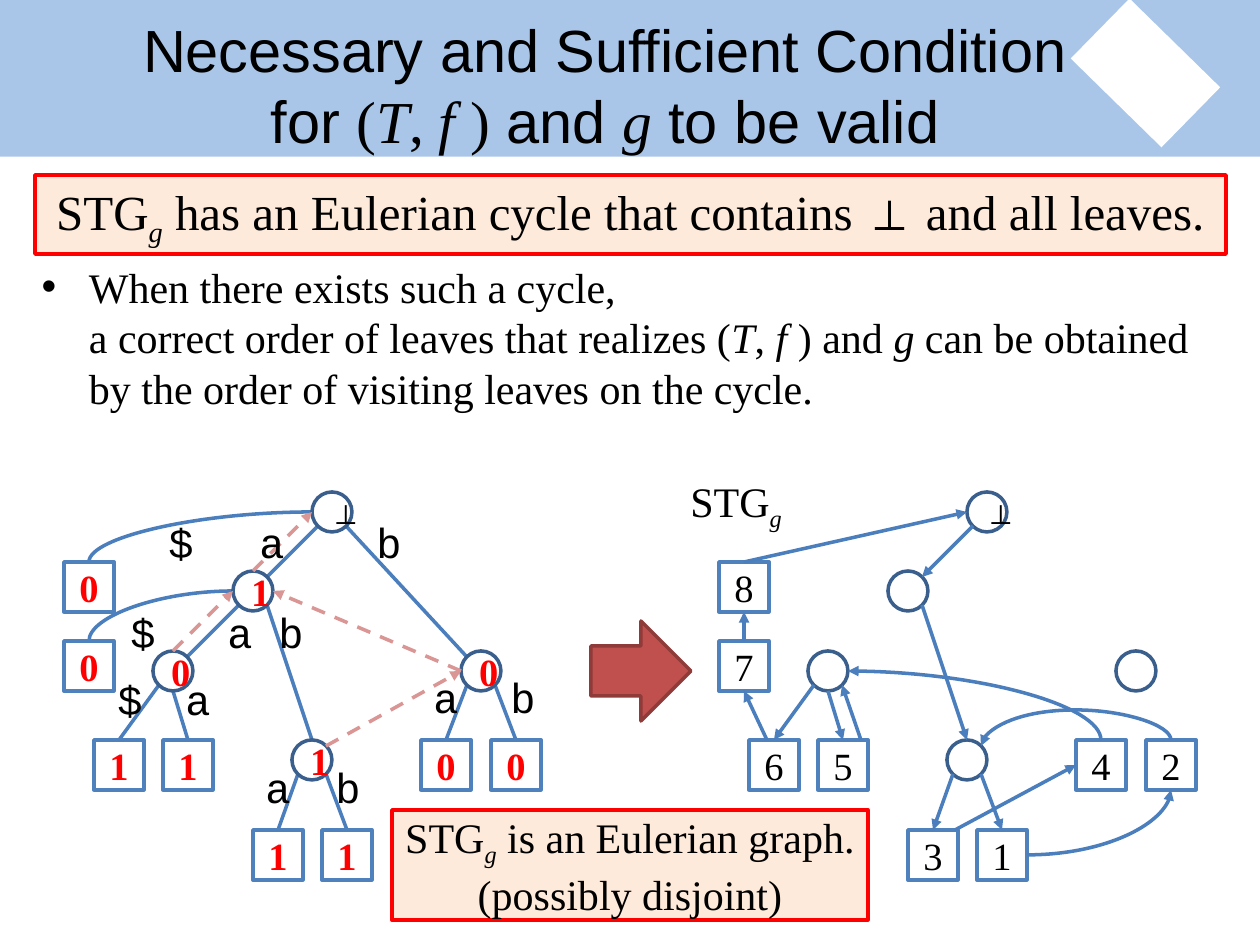
import lxml.etree
import pptx
import pptx.dml.color
import pptx.enum.dml
import pptx.enum.shapes
import pptx.enum.text
import pptx.oxml
import pptx.oxml.ns
import pptx.util

RGBColor = pptx.dml.color.RGBColor
BLACK = RGBColor(0x00, 0x00, 0x00)
WHITE = RGBColor(0xFF, 0xFF, 0xFF)
RED = RGBColor(0xFF, 0x00, 0x00)
PEACH = RGBColor(0xFD, 0xEA, 0xDA)
BAND_BLUE = RGBColor(0x55, 0x8E, 0xD5)
NODE_BLUE = RGBColor(0x3A, 0x5F, 0x8C)
LEAF_BLUE = RGBColor(0x4F, 0x81, 0xBD)
EDGE_BLUE = RGBColor(0x4B, 0x7E, 0xBC)
PINK = RGBColor(0xD9, 0x96, 0x94)
ARROW_RED = RGBColor(0xC0, 0x50, 0x4D)
ARROW_EDGE = RGBColor(0x8E, 0x3B, 0x39)

SANS, SERIF, MONO = "Arial", "Times New Roman", "Courier New"
EMU_PER_PX = 914400 / 126
SHAPES = pptx.enum.shapes.MSO_SHAPE
CENTER = pptx.enum.text.PP_ALIGN.CENTER
MIDDLE = pptx.enum.text.MSO_ANCHOR.MIDDLE
AUTO_SIZE = pptx.enum.text.MSO_AUTO_SIZE
qn = pptx.oxml.ns.qn

# Every node is named by the string that its path from the root spells.
ROOT = "⊥"
NODES = {ROOT: (332, 512), "a": (253, 591), "aa": (173, 671), "ab": (312, 760), "b": (481, 671)}
LEAVES = {"$": (89, 587), "a$": (89, 666), "aa$": (119, 765), "aaa": (188, 765),
          "aba": (278, 855), "abb": (347, 855), "ba": (446, 765), "bb": (516, 765)}
CENTERS = NODES | LEAVES
TREE_BITS = {"a": "1", "aa": "0", "ab": "1", "b": "0", "$": "0", "a$": "0", "aa$": "1",
             "aaa": "1", "aba": "1", "abb": "1", "ba": "0", "bb": "0"}
VISIT_ORDER = {"$": "8", "a$": "7", "aa$": "6", "aaa": "5", "aba": "3", "abb": "1",
               "ba": "4", "bb": "2"}
GRAPH_SHIFT = 655

TREE_EDGES = [(ROOT, "sw", "a", "ne"), (ROOT, "se", "b", "nw"), ("a", "sw", "aa", "ne"),
              ("a", "se", "ab", "n"), ("aa", "sw", "aa$", "n"), ("aa", "s", "aaa", "n"),
              ("ab", "sw", "aba", "n"), ("ab", "se", "abb", "n"),
              ("b", "sw", "ba", "n"), ("b", "se", "bb", "n")]
TREE_CURVES = [(ROOT, "w", "$", "n"), ("a", "w", "a$", "n")]
SUFFIX_LINKS = [("ab", "ne", "b", "w"), ("a", "n", ROOT, "w"),
                ("b", "w", "a", "e"), ("aa", "n", "a", "w")]
EDGE_LABELS = {"$": (156, 510), "a": (247, 510), "b": (364, 510),
               "a$": (118, 600), "aa": (215, 600), "ab": (266, 600),
               "aa$": (105, 667), "aaa": (173, 667), "aba": (253, 755), "abb": (323, 755),
               "ba": (421, 665), "bb": (498, 665)}
# A fifth value moves the starting point sideways.
CYCLE_EDGES = [(ROOT, "sw", "a", "ne"), ("a", "se", "ab", "n"), ("aa", "s", "aaa", "n", 0),
               ("ab", "sw", "aba", "n"), ("ab", "se", "abb", "n"), ("aa", "sw", "aa$", "n"),
               ("$", "n", ROOT, "w"), ("a$", "n", "$", "s"), ("aba", "n", "ba", "w", 22),
               ("aaa", "n", "aa", "se", 18), ("aa$", "n", "a$", "s", -7)]


def px(length):
    return pptx.util.Emu(round(length * EMU_PER_PX))


def port(name, side, shift=0):
    """Point on the rim of a node or leaf, by compass side."""
    x, y = CENTERS[name]
    reach = 25 if name in LEAVES else 14 if len(side) == 2 else 20
    return (x + reach * (("e" in side) - ("w" in side)) + shift,
            y + reach * (("s" in side) - ("n" in side)))


def ends(edge):
    start, start_side, finish, finish_side, *shift = edge
    return port(start, start_side, *shift), port(finish, finish_side)


class SlideStyle:
    def __init__(self, slide, font=SERIF, line_width=2):
        self.slide = slide
        self.font = font
        self.line_width = pptx.util.Pt(line_width)
        self.offset = 0

    def fill_text(self, frame, spans, size, color=BLACK, bold=None, align=None):
        """Add (text, style) spans; a style may hold font, italic and sub."""
        para = frame.paragraphs[0]
        para.space_before = pptx.util.Pt(0)
        if align is not None:
            para.alignment = align
        for text, style in spans:
            for index, piece in enumerate(text.split("\n")):
                if index:
                    para.add_line_break()
                    line_break = para._p.findall(qn("a:br"))[-1]
                    lxml.etree.SubElement(line_break, qn("a:rPr"), sz=str(size * 100))
                span = para.add_run()
                span.text = piece
                span.font.name = style.get("font", self.font)
                span.font.size = pptx.util.Pt(size)
                span.font.color.rgb = color
                span.font.bold = bold
                span.font.italic = style.get("italic")
                if style.get("sub"):
                    span.font._element.set("baseline", "-25000")

    def placeholder(self, index, area, spans, size, align=None):
        holder = self.slide.placeholders[index]
        holder.left, holder.top, holder.width, holder.height = map(px, area)
        holder.text_frame.auto_size = AUTO_SIZE.NONE
        self.fill_text(holder.text_frame, spans, size, align=align)
        return holder

    def shape(self, kind, area, fill, line=None):
        left, top, width, height = area
        shape = self.slide.shapes.add_shape(
            kind, px(left + self.offset), px(top), px(width), px(height))
        shape.shadow.inherit = False
        shape.fill.solid()
        shape.fill.fore_color.rgb = fill
        if line is None:
            shape.line.fill.background()
        else:
            shape.line.color.rgb = line
            shape.line.width = self.line_width
        return shape

    def panel(self, area, spans, size):
        box = self.shape(SHAPES.RECTANGLE, area, PEACH, RED)
        box.text_frame.word_wrap = True
        box.text_frame.vertical_anchor = MIDDLE
        self.fill_text(box.text_frame, spans, size, align=CENTER)

    def vertex(self, name, text, color, bold=None):
        x, y = CENTERS[name]
        leaf = name in LEAVES
        half = 25 if leaf else 20
        kind = SHAPES.RECTANGLE if leaf else SHAPES.OVAL
        box = self.shape(kind, (x - half, y - half, 2 * half, 2 * half), WHITE,
                         LEAF_BLUE if leaf else NODE_BLUE)
        if text:
            box.text_frame.word_wrap = not leaf
            box.text_frame.vertical_anchor = MIDDLE
            self.fill_text(box.text_frame, [(text, {})], 18 if text == ROOT else 22,
                           color, bold, CENTER)

    def label(self, area, spans, size=24):
        box = self.slide.shapes.add_textbox(*map(px, area))
        box.text_frame.word_wrap = False
        box.text_frame.auto_size = AUTO_SIZE.SHAPE_TO_FIT_TEXT
        self.fill_text(box.text_frame, spans, size)

    def line(self, start, finish, color=EDGE_BLUE, curved=False, dashed=False, arrow=None):
        """Connector; arrow is None, "headEnd" (at start) or "tailEnd" (at finish)."""
        kinds = pptx.enum.shapes.MSO_CONNECTOR
        line = self.slide.shapes.add_connector(
            kinds.CURVE if curved else kinds.STRAIGHT, px(start[0] + self.offset), px(start[1]),
            px(finish[0] + self.offset), px(finish[1]))
        line.line.color.rgb = color
        line.line.width = self.line_width
        if dashed:
            line.line.dash_style = pptx.enum.dml.MSO_LINE.DASH
        properties = line._element.spPr
        if arrow:
            lxml.etree.SubElement(properties.find(qn("a:ln")), qn(f"a:{arrow}"), type="triangle")
        lxml.etree.SubElement(properties, qn("a:effectLst"))
        return line

    def quarter_curve(self, start, finish, arrow=None):
        """Curve that leaves level and arrives upright."""
        curve = self.line(start, finish, curved=True, arrow=arrow)
        curve._element.spPr.find(qn("a:prstGeom")).set("prst", "curvedConnector2")

    def arch(self, start, finish, rise, arrow):
        """Curve that leaves upward, passes over and comes down on finish."""
        x, y = (start[0] + finish[0]) / 2, (start[1] + finish[1]) / 2
        drop, reach = start[1] - finish[1], finish[0] - start[0]
        curve = self.line((x + drop / 2, y + reach / 2), (x - drop / 2, y - reach / 2),
                          curved=True, arrow=arrow)
        properties = curve._element.spPr
        properties.find(qn("a:xfrm")).set("rot", "5400000")
        guides = properties.find(qn("a:prstGeom")).get_or_add_avLst()
        lxml.etree.SubElement(guides, qn("a:gd"), name="adj1",
                              fmla=f"val {round(rise / drop * 100000)}")

    def header(self):
        band = self.line((0, 78), (1260, 78), BAND_BLUE)
        band.line.width = pptx.util.Pt(90)
        color = band._element.spPr.find(".//" + qn("a:srgbClr"))
        lxml.etree.SubElement(color, qn("a:alpha"), val="50000")
        diamond = self.shape(SHAPES.RECTANGLE, (1082, 31, 127, 84), WHITE)
        diamond.rotation = 44.4
        for depth, item in enumerate((band, diamond), 2):
            self.slide.shapes._spTree.insert(depth, item._element)


def draw_tree(style):
    for edge in TREE_EDGES:
        style.line(*ends(edge))
    for edge in TREE_CURVES:
        style.quarter_curve(*ends(edge))
    for name in CENTERS:
        root = name == ROOT
        style.vertex(name, TREE_BITS.get(name, name), BLACK if root else RED, not root)
    for link in SUFFIX_LINKS:
        style.line(*ends(link), PINK, dashed=True, arrow="tailEnd")
    for name, (left, top) in EDGE_LABELS.items():
        style.label((left, top, 50, 63), [(name[-1], {"font": MONO})])


def draw_cycle_graph(style):
    style.offset = GRAPH_SHIFT
    for name in CENTERS:
        style.vertex(name, name if name == ROOT else VISIT_ORDER.get(name), BLACK)
    for edge in CYCLE_EDGES:
        style.line(*ends(edge), arrow="tailEnd")
    style.quarter_curve(*ends(("abb", "e", "bb", "s")), "tailEnd")
    style.quarter_curve(*ends(("aa", "e", "ba", "n")), "headEnd")
    style.arch(*ends(("ab", "ne", "bb", "n")), 36, "headEnd")
    style.offset = 0


def main():
    deck = pptx.Presentation()
    deck.slide_width, deck.slide_height = px(1260), px(945)
    style = SlideStyle(deck.slides.add_slide(deck.slide_layouts[1]))
    plain, italic, sans = {}, {"italic": True}, {"font": SANS}
    graph_name = [("STG", plain), ("g", {"italic": True, "sub": True})]

    style.header()
    title = style.placeholder(0, (29, 20, 1152, 129), [
        ("Necessary and Sufficient Condition\nfor ", sans), ("(", plain), ("T", italic),
        (", ", plain), ("f", italic), (" )", plain), (" and ", sans), ("g", italic),
        (" to be valid", sans)], 34, CENTER)
    title.text_frame.vertical_anchor = MIDDLE
    style.placeholder(1, (29, 255, 1201, 169), [
        ("When there exists such a cycle, \na correct order of leaves that realizes (", plain),
        ("T", italic), (", ", plain), ("f ", italic), (") and ", plain), ("g", italic),
        (" can be obtained by the order of visiting leaves on the cycle.", plain)], 24)
    draw_tree(style)
    draw_cycle_graph(style)
    style.label((678, 469, 120, 63), graph_name)
    style.shape(SHAPES.RIGHT_ARROW, (591, 621, 100, 100), ARROW_RED, ARROW_EDGE)
    style.panel((35, 175, 1191, 79), graph_name + [
        (" has an Eulerian cycle that contains ⊥ and all leaves.", plain)], 28)
    style.panel((392, 810, 476, 110), graph_name + [
        (" is an Eulerian graph.\n(possibly disjoint)", plain)], 24)
    deck.save("out.pptx")


if __name__ == "__main__":
    main()
